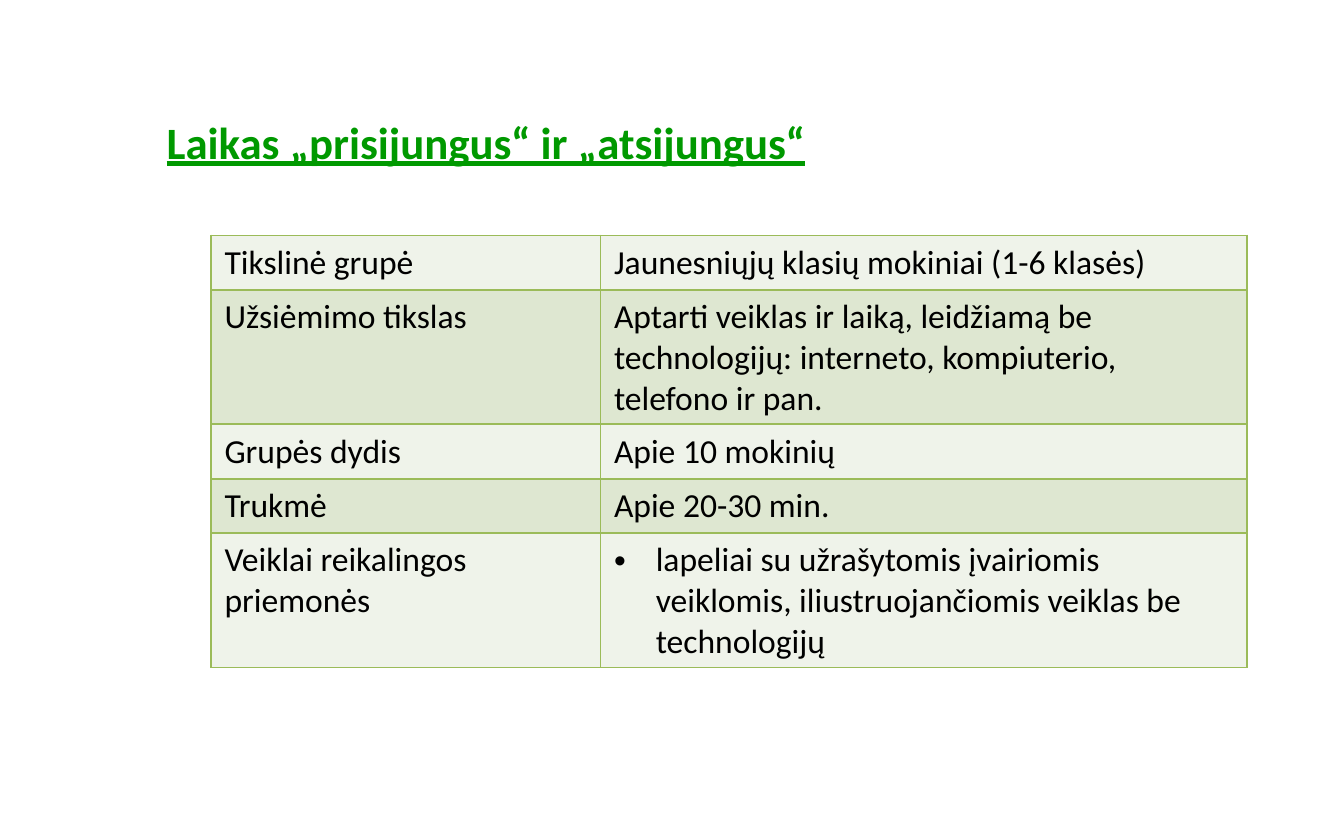
import pptx
import pptx.dml.color
import pptx.enum.text
import pptx.oxml.ns
import pptx.util
from dataclasses import dataclass
from lxml import etree

Cm = pptx.util.Cm
Pt = pptx.util.Pt


@dataclass(frozen=True)
class Theme:
    font: str = "Calibri"
    title_size: int = 24
    body_size: int = 18
    title_color: str = "009900"
    body_color: str = "000000"
    border_color: str = "9BBB59"
    border_width: int = 1
    row_fills: tuple = ("EFF3EA", "DEE7D1")


THEME = Theme()
TITLE = "Laikas „prisijungus“ ir „atsijungus“"
# Each row: label, description, whether the description is a bullet
ACTIVITY_ROWS = [
    ("Tikslinė grupė", "Jaunesniųjų klasių mokiniai (1-6 klasės)", False),
    ("Užsiėmimo tikslas",
     "Aptarti veiklas ir laiką, leidžiamą be technologijų: "
     "interneto, kompiuterio, telefono ir pan.", False),
    ("Grupės dydis", "Apie 10 mokinių", False),
    ("Trukmė", "Apie 20-30 min.", False),
    ("Veiklai reikalingos priemonės",
     "lapeliai su užrašytomis įvairiomis veiklomis, "
     "iliustruojančiomis veiklas be technologijų", True),
]


def rgb(color):
    return pptx.dml.color.RGBColor.from_string(color)


def add_child(parent, tag, **attributes):
    return etree.SubElement(parent, pptx.oxml.ns.qn(tag), attributes)


def write_text(text_frame, text, *, size=THEME.body_size, color=THEME.body_color,
               bold=False, underline=False, bullet=False):
    paragraph = text_frame.paragraphs[0]
    if bullet:
        properties = paragraph._p.get_or_add_pPr()
        indent = Cm(0.79)
        properties.set("marL", str(indent))
        properties.set("indent", str(-indent))
        add_child(properties, "a:buFont", typeface="Arial")
        add_child(properties, "a:buChar", char="•")
    run = paragraph.add_run()
    run.text = text
    run.font.name = THEME.font
    run.font.size = Pt(size)
    run.font.color.rgb = rgb(color)
    run.font.bold = bold
    run.font.underline = underline


def add_title(slide):
    box = slide.shapes.add_textbox(Cm(2.9), Cm(1.35), Cm(21.06), Cm(2.64))
    box.text_frame.word_wrap = True
    box.text_frame.vertical_anchor = pptx.enum.text.MSO_ANCHOR.MIDDLE
    write_text(box.text_frame, TITLE, size=THEME.title_size,
               color=THEME.title_color, bold=True, underline=True)


def style_cell(cell, fill_color):
    cell.fill.solid()
    cell.fill.fore_color.rgb = rgb(fill_color)
    # Border lines must precede the fill in the cell properties
    properties = cell._tc.get_or_add_tcPr()
    for position, side in enumerate(("a:lnL", "a:lnR", "a:lnT", "a:lnB")):
        line = add_child(properties, side, w=str(Pt(THEME.border_width)))
        add_child(add_child(line, "a:solidFill"), "a:srgbClr", val=THEME.border_color)
        properties.insert(position, line)


def add_activity_table(slide):
    column_widths = (Cm(7.36), Cm(12.22))
    row_height = Cm(1.03)
    frame = slide.shapes.add_table(
        len(ACTIVITY_ROWS), len(column_widths), Cm(3.99), Cm(4.45),
        sum(column_widths), row_height * len(ACTIVITY_ROWS))
    table = frame.table
    table.first_row = False
    table.horz_banding = False
    for column, width in zip(table.columns, column_widths):
        column.width = width
    for index, (row, content) in enumerate(zip(table.rows, ACTIVITY_ROWS)):
        row.height = row_height
        label, description, bullet = content
        write_text(row.cells[0].text_frame, label)
        write_text(row.cells[1].text_frame, description, bullet=bullet)
        for cell in row.cells:
            style_cell(cell, THEME.row_fills[index % len(THEME.row_fills)])


def main():
    presentation = pptx.Presentation()
    presentation.slide_width = Cm(25.4)
    presentation.slide_height = Cm(15.88)
    # Blank layout
    slide = presentation.slides.add_slide(presentation.slide_layouts[6])
    add_title(slide)
    add_activity_table(slide)
    presentation.save("out.pptx")


if __name__ == "__main__":
    main()
